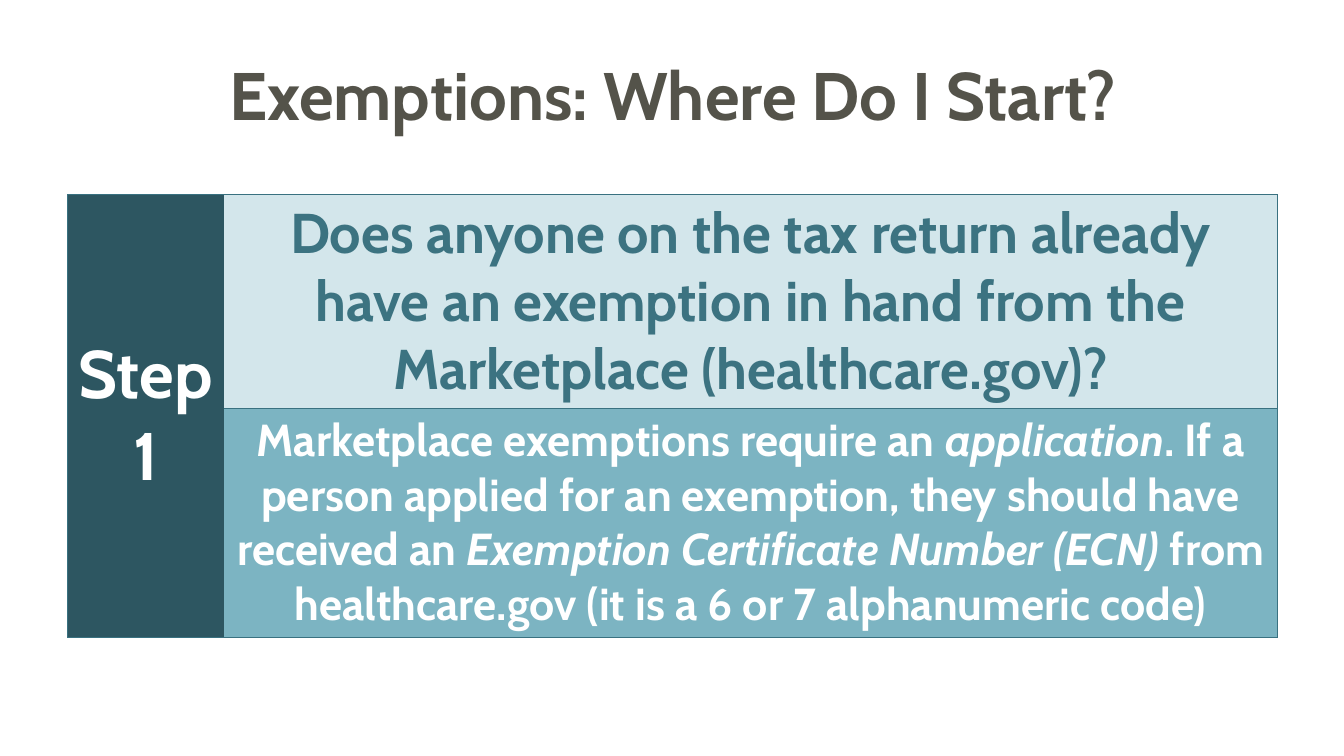
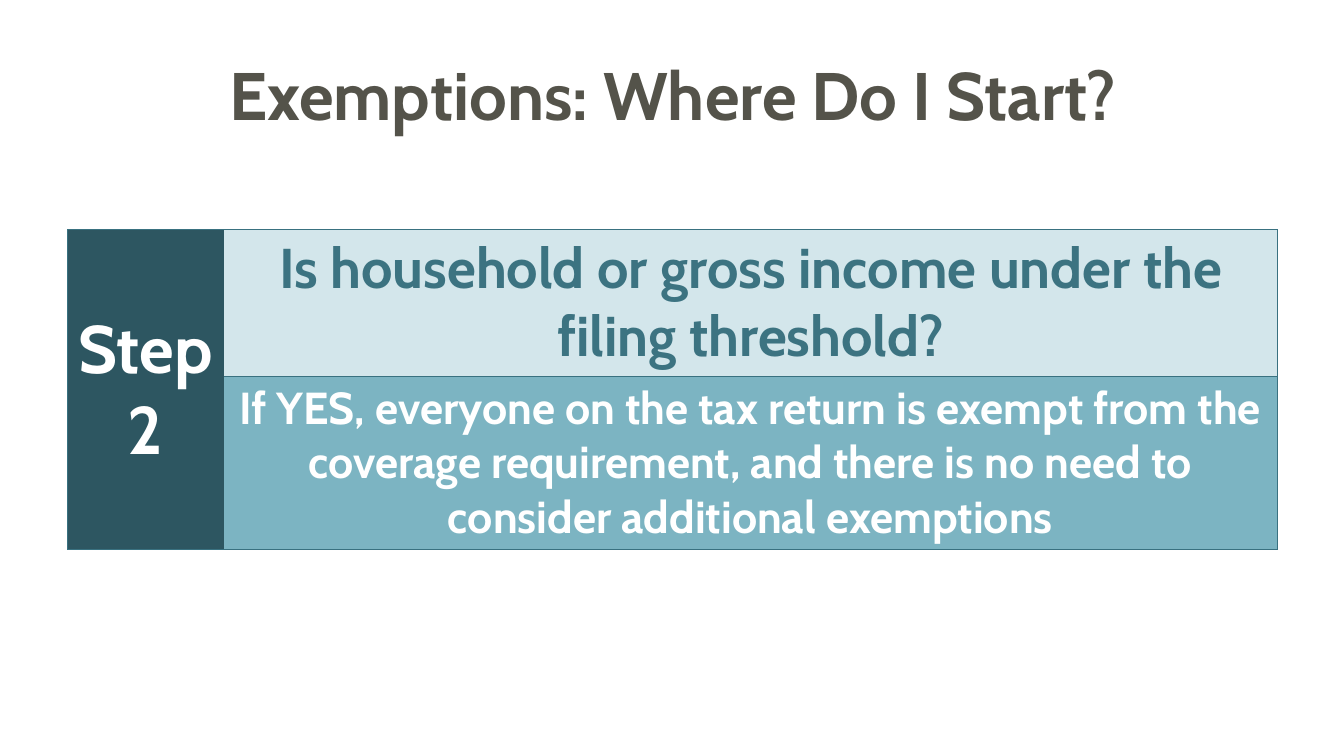
from lxml.etree import SubElement
from pptx import Presentation
from pptx.dml.color import RGBColor
from pptx.enum.text import MSO_ANCHOR, MSO_AUTO_SIZE, PP_ALIGN
from pptx.oxml.ns import qn
from pptx.util import Inches, Pt

FONT = "Cabin"
WHITE, TITLE, BORDER = "FFFFFF", "54534A", "397180"
STEP_FILL, QUESTION_FILL, ANSWER_FILL, QUESTION_TEXT = "2D5661", "D3E6EB", "7CB4C2", "3C7381"
NO_STYLE = "{2D5ABB26-0587-4C30-8999-92F81FD0307C}"
SLIDE_WIDTH, SLIDE_HEIGHT = 13.33, 7.5
MARGIN, STEP_WIDTH = 0.67, 1.55
CONTENT_WIDTH = 12

HEADING = "Exemptions: Where Do I Start?"
STEPS = [
    {
        "label": "Step 1",
        "top": 1.93,
        "rows": (2.12, 2.27),
        "question": "Does anyone on the tax return already have an exemption in hand "
                    "from the Marketplace (healthcare.gov)?",
        "answer": [
            ("Marketplace exemptions require an ", False),
            ("application", True),
            (". If a person applied for an exemption, they should have received an ", False),
            ("Exemption Certificate Number (ECN) ", True),
            ("from healthcare.gov (it is a 6 or 7 alphanumeric code)", False),
        ],
    },
    {
        "label": "Step 2",
        "top": 2.28,
        "rows": (1.45, 1.72),
        "question": "Is household or gross income under the filing threshold?",
        "answer": [
            ("If YES, everyone on the tax return is exempt from the coverage requirement, "
             "and there is no need to consider additional exemptions", False),
        ],
    },
]


def color(value):
    """Turn a hex string into a colour."""
    return RGBColor.from_string(value)


def write(frame, spans, size, text_color):
    """Fill a text frame with one centred bold paragraph of (text, italic) spans."""
    para = frame.paragraphs[0]
    para.alignment = PP_ALIGN.CENTER
    for text, italic in spans:
        span = para.add_run()
        span.text = text
        span.font.name = FONT
        span.font.size = Pt(size)
        span.font.bold = True
        span.font.italic = italic
        span.font.color.rgb = color(text_color)


def add_borders(cell, sides):
    """Draw thin lines on the given sides, in the order L, R, T, B."""
    properties = cell._tc.get_or_add_tcPr()
    for side in sides:
        line = SubElement(properties, qn(f"a:ln{side}"), w=str(Pt(0.75)))
        fill = SubElement(line, qn("a:solidFill"))
        SubElement(fill, qn("a:srgbClr"), val=BORDER)


def style_cell(cell, fill, sides):
    """Give a cell its borders, fill and vertical anchor."""
    add_borders(cell, sides)
    cell.fill.solid()
    cell.fill.fore_color.rgb = color(fill)
    cell.vertical_anchor = MSO_ANCHOR.MIDDLE


def add_title(page):
    """Place and format the title placeholder."""
    title = page.shapes.title
    title.left, title.top = Inches(MARGIN), Inches(0.3)
    title.width, title.height = Inches(CONTENT_WIDTH), Inches(1.25)
    frame = title.text_frame
    frame.word_wrap = True
    frame.auto_size = MSO_AUTO_SIZE.NONE
    frame.vertical_anchor = MSO_ANCHOR.MIDDLE
    write(frame, [(HEADING, False)], 48, TITLE)


def add_step_table(page, step):
    """Add the step label beside its question and answer."""
    holder = page.shapes.add_table(
        2, 2, Inches(MARGIN), Inches(step["top"]),
        Inches(CONTENT_WIDTH), Inches(sum(step["rows"])))
    table = holder.table
    table.first_row = table.horz_banding = False
    table._tbl.tblPr.find(qn("a:tableStyleId")).text = NO_STYLE
    for column, width in zip(table.columns, (STEP_WIDTH, CONTENT_WIDTH - STEP_WIDTH)):
        column.width = Inches(width)
    for row, height in zip(table.rows, step["rows"]):
        row.height = Inches(height)

    label, question, answer = table.cell(0, 0), table.cell(0, 1), table.cell(1, 1)
    label.merge(table.cell(1, 0))
    add_borders(table.cell(1, 0), "LB")
    parts = [
        (label, [(step["label"], False)], 48, WHITE, STEP_FILL, "LTB"),
        (question, [(step["question"], False)], 40, QUESTION_TEXT, QUESTION_FILL, "RTB"),
        (answer, step["answer"], 32, WHITE, ANSWER_FILL, "RTB"),
    ]
    for cell, spans, size, text_color, fill, sides in parts:
        style_cell(cell, fill, sides)
        write(cell.text_frame, spans, size, text_color)
    answer.vertical_anchor = MSO_ANCHOR.TOP


def main():
    """Build the deck."""
    deck = Presentation()
    deck.slide_width, deck.slide_height = Inches(SLIDE_WIDTH), Inches(SLIDE_HEIGHT)
    for step in STEPS:
        page = deck.slides.add_slide(deck.slide_layouts[5])
        add_title(page)
        add_step_table(page, step)
    deck.save("out.pptx")


if __name__ == "__main__":
    main()
